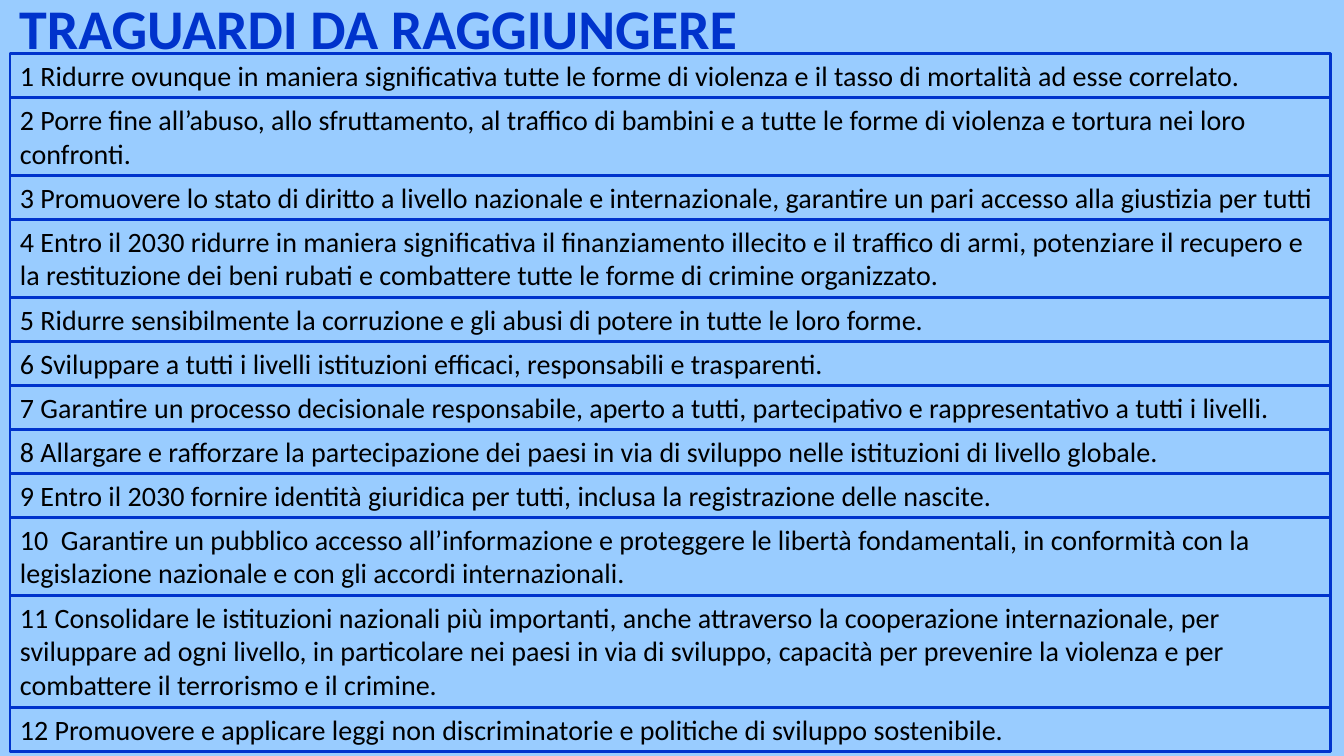
"""Slide listing the twelve targets in stacked, outlined rows."""
from dataclasses import dataclass

from pptx import Presentation
from pptx.dml.color import RGBColor
from pptx.enum.shapes import MSO_SHAPE
from pptx.enum.text import MSO_ANCHOR, MSO_AUTO_SIZE, PP_ALIGN
from pptx.util import Inches, Pt

WIDTH, HEIGHT = Inches(13.33), Inches(7.5)
LEFT, SPAN = 0.75, 98.25
TOP, LINE, PAD = 7.07, 4.49, 1.33
SKY, BLUE, BLACK = "99CCFF", "0033CC", "000000"


@dataclass
class Goal:
    """Wording of a row and the number of text lines it takes."""
    text: str
    lines: int = 1

    @property
    def high(self) -> float:
        """Return the row height as a percentage of the slide."""
        return PAD + LINE * self.lines


GOALS = [
    Goal("1 Ridurre ovunque in maniera significativa tutte le forme di violenza "
         "e il tasso di mortalità ad esse correlato."),
    Goal("2 Porre fine all’abuso, allo sfruttamento, al traffico di bambini e a "
         "tutte le forme di violenza e tortura nei loro confronti.", 2),
    Goal("3 Promuovere lo stato di diritto a livello nazionale e internazionale, "
         "garantire un pari accesso alla giustizia per tutti"),
    Goal("4 Entro il 2030 ridurre in maniera significativa il finanziamento "
         "illecito e il traffico di armi, potenziare il recupero e la restituzione "
         "dei beni rubati e combattere tutte le forme di crimine organizzato.", 2),
    Goal("5 Ridurre sensibilmente la corruzione e gli abusi di potere in tutte "
         "le loro forme."),
    Goal("6 Sviluppare a tutti i livelli istituzioni efficaci, responsabili e "
         "trasparenti."),
    Goal("7 Garantire un processo decisionale responsabile, aperto a tutti, "
         "partecipativo e rappresentativo a tutti i livelli."),
    Goal("8 Allargare e rafforzare la partecipazione dei paesi in via di sviluppo "
         "nelle istituzioni di livello globale."),
    Goal("9 Entro il 2030 fornire identità giuridica per tutti, inclusa la "
         "registrazione delle nascite."),
    Goal("10  Garantire un pubblico accesso all’informazione e proteggere le "
         "libertà fondamentali, in conformità con la legislazione nazionale e con "
         "gli accordi internazionali.", 2),
    Goal("11 Consolidare le istituzioni nazionali più importanti, anche attraverso "
         "la cooperazione internazionale, per sviluppare ad ogni livello, in "
         "particolare nei paesi in via di sviluppo, capacità per prevenire la "
         "violenza e per combattere il terrorismo e il crimine.", 3),
    Goal("12 Promuovere e applicare leggi non discriminatorie e politiche di "
         "sviluppo sostenibile."),
]


def color(code: str) -> RGBColor:
    """Turn a hex string into a colour."""
    return RGBColor.from_string(code)


def place(left: float, top: float, wide: float, high: float) -> tuple[int, ...]:
    """Turn percentages of the slide into lengths."""
    return tuple(int(share * size / 100) for share, size in
                 zip((left, top, wide, high), (WIDTH, HEIGHT) * 2))


def apply(item, form: dict) -> None:
    """Set each attribute named in the format."""
    for key, value in form.items():
        setattr(item, key, value)


def write(shape, text: str, size: int, tint: str, bold: bool = False) -> None:
    """Put left-aligned text at the top of a shape."""
    frame = shape.text_frame
    frame.text = text
    apply(frame, {"word_wrap": True, "vertical_anchor": MSO_ANCHOR.TOP,
                  "auto_size": MSO_AUTO_SIZE.SHAPE_TO_FIT_TEXT})
    line = frame.paragraphs[0]
    line.alignment = PP_ALIGN.LEFT
    font = line.runs[0].font
    apply(font, {"name": "Calibri", "size": Pt(size), "bold": bold})
    font.color.rgb = color(tint)


def draw(slide, goal: Goal, top: float) -> None:
    """Draw one outlined row."""
    box = slide.shapes.add_shape(MSO_SHAPE.RECTANGLE,
                                 *place(LEFT, top, SPAN, goal.high))
    box.shadow.inherit = False
    box.fill.background()
    box.line.color.rgb = color(BLUE)
    box.line.width = Pt(2)
    write(box, goal.text, 20, BLACK)


def main() -> None:
    """Build and save the slide."""
    deck = Presentation()
    apply(deck, {"slide_width": WIDTH, "slide_height": HEIGHT})
    slide = deck.slides.add_slide(deck.slide_layouts[5])
    back = slide.background.fill
    back.solid()
    back.fore_color.rgb = color(SKY)
    title = slide.shapes.title
    spot = place(0.68, -1.47, 76, 10.27)
    apply(title, dict(zip(("left", "top", "width", "height"), spot)))
    write(title, "TRAGUARDI DA RAGGIUNGERE", 40, BLUE, True)
    top = TOP
    for goal in GOALS:
        draw(slide, goal, top)
        top += goal.high
    deck.save("out.pptx")


if __name__ == "__main__":
    main()
